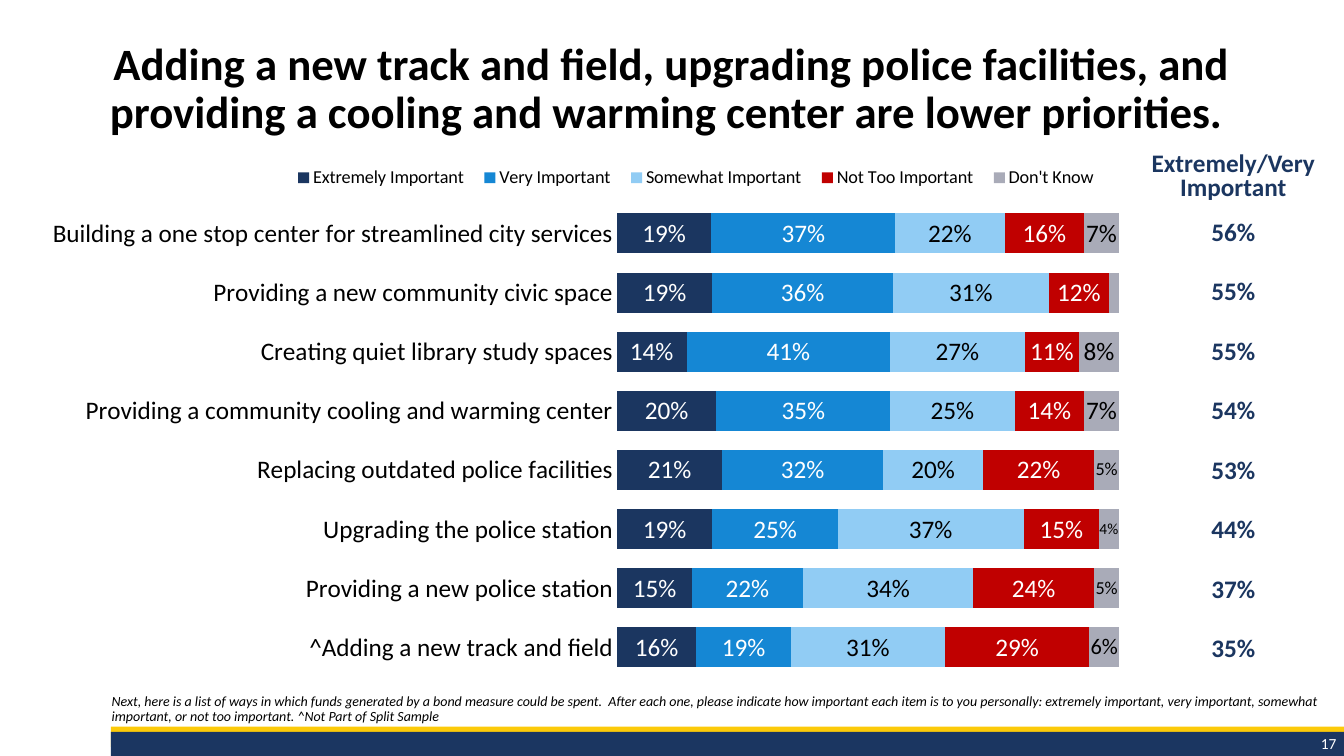
from lxml import etree
from pptx import Presentation
from pptx.chart.data import CategoryChartData
from pptx.dml.color import RGBColor
from pptx.enum.chart import (XL_CHART_TYPE, XL_LABEL_POSITION,
                             XL_LEGEND_POSITION, XL_TICK_MARK)
from pptx.enum.shapes import MSO_SHAPE
from pptx.enum.text import MSO_ANCHOR, PP_ALIGN
from pptx.oxml.ns import qn
from pptx.util import Pt

STACKED = XL_CHART_TYPE.BAR_STACKED_100
MID_LABEL = XL_LABEL_POSITION.CENTER
TOP = XL_LEGEND_POSITION.TOP
NO_TICK = XL_TICK_MARK.NONE
RECT = MSO_SHAPE.RECTANGLE
MIDDLE, BOTTOM = MSO_ANCHOR.MIDDLE, MSO_ANCHOR.BOTTOM
LEFT, CENTER, RIGHT = PP_ALIGN.LEFT, PP_ALIGN.CENTER, PP_ALIGN.RIGHT

FONT = "Calibri"
BLACK = RGBColor(0x00, 0x00, 0x00)
WHITE = RGBColor(0xFF, 0xFF, 0xFF)
NAVY = RGBColor(0x1B, 0x36, 0x60)
BLUE = RGBColor(0x15, 0x87, 0xD4)
SKY = RGBColor(0x91, 0xCC, 0xF4)
RED = RGBColor(0xC0, 0x00, 0x00)
GRAY = RGBColor(0xA9, 0xAB, 0xB8)
GOLD = RGBColor(0xFC, 0xCA, 0x09)
BASE = RGBColor(0x1B, 0x36, 0x61)

TITLE = ("Adding a new track and field, upgrading police facilities, and "
         "providing a cooling and warming center are lower priorities. ")
NOTE = ("Next, here is a list of ways in which funds generated by a bond measure "
        "could be spent.  After each one, please indicate how important each item "
        "is to you personally: extremely important, very important, somewhat "
        "important, or not too important. ^Not Part of Split Sample")
PAGE = "17"
HEAD = "Extremely/Very Important"
ITEMS = [
    ("Building a one stop center for streamlined city services", "56%"),
    ("Providing a new community civic space", "55%"),
    ("Creating quiet library study spaces", "55%"),
    ("Providing a community cooling and warming center", "54%"),
    ("Replacing outdated police facilities", "53%"),
    ("Upgrading the police station", "44%"),
    ("Providing a new police station", "37%"),
    ("^Adding a new track and field", "35%"),
]
SERIES = [
    ("Extremely Important", NAVY, WHITE, (.19, .19, .14, .20, .21, .19, .15, .16)),
    ("Very Important", BLUE, WHITE, (.37, .36, .41, .35, .32, .25, .22, .19)),
    ("Somewhat Important", SKY, BLACK, (.22, .31, .27, .25, .20, .37, .34, .31)),
    ("Not Too Important", RED, WHITE, (.16, .12, .11, .14, .22, .15, .24, .29)),
    ("Don't Know", GRAY, BLACK, (.07, .02, .08, .07, .05, .04, .05, .06)),
]
SMALL = {4: 13, 5: 11, 6: 13, 7: 16}
HIDDEN = 1
BANDS = [(519.1, 14.4, GOLD), (522.7, 17.3, BASE)]
BAND_X = 79.2
WIDE, HIGH = 960, 540


def style(font, size, color, bold=False, italic=False):
    font.name, font.size = FONT, Pt(size)
    font.color.rgb = color
    font.bold, font.italic = bold, italic


def write(frame, text, size, color, align, anchor, space=None, **look):
    frame.word_wrap = True
    frame.vertical_anchor = anchor
    para = frame.paragraphs[0]
    para.alignment = align
    para.line_spacing = space
    run = para.add_run()
    run.text = text
    style(run.font, size, color, **look)


def add_text(slide, box, *args, **look):
    shape = slide.shapes.add_textbox(*map(Pt, box))
    write(shape.text_frame, *args, **look)


def place(node, spot, box, inner=False):
    for old in node.findall(qn("c:layout")):
        node.remove(old)
    layout = etree.Element(qn("c:layout"))
    manual = etree.SubElement(layout, qn("c:manualLayout"))
    pairs = [("layoutTarget", "inner")] if inner else []
    pairs += [("xMode", "edge"), ("yMode", "edge"), *zip("xywh", box)]
    for tag, val in pairs:
        etree.SubElement(manual, qn("c:" + tag)).set("val", str(val))
    node.insert(spot, layout)


def add_bands(slide):
    for top, high, color in BANDS:
        band = slide.shapes.add_shape(
            RECT, Pt(BAND_X), Pt(top), Pt(WIDE - BAND_X), Pt(high))
        band.shadow.inherit = False
        band.fill.solid()
        band.fill.fore_color.rgb = color
        band.line.fill.background()


def add_bars(slide):
    data = CategoryChartData(number_format="0%")
    data.categories = [name for name, _ in ITEMS]
    for name, _, _, vals in SERIES:
        data.add_series(name, vals)
    box = map(Pt, (8.64, 112.3, 853.9, 396.7))
    chart = slide.shapes.add_chart(STACKED, *box, data).chart
    style(chart.font, 18, BLACK)
    chart.has_title = False

    chart.has_legend = True
    legend = chart.legend
    legend.position = TOP
    legend.include_in_layout = False
    style(legend.font, 13, BLACK)
    place(legend._element, 1, (0.227, 0.012, 0.69, 0.05))

    axis = chart.category_axis
    axis.reverse_order = True
    axis.major_tick_mark = axis.minor_tick_mark = NO_TICK
    axis.format.line.fill.background()
    style(axis.tick_labels.font, 18, BLACK)
    scale = chart.value_axis
    scale.minimum_scale, scale.maximum_scale = 0, 1
    scale.major_unit = 0.2
    scale.has_major_gridlines = False
    scale.visible = False

    plot = chart.plots[0]
    plot.gap_width, plot.overlap = 48, 100
    plot.vary_by_categories = False
    area = chart._chartSpace.find(".//" + qn("c:plotArea"))
    place(area, 0, (0.506, 0.084, 0.42, 0.852), inner=True)
    for series, (_, fill, ink, _) in zip(plot.series, SERIES):
        series.format.fill.solid()
        series.format.fill.fore_color.rgb = fill
        labels = series.data_labels
        labels.show_value = True
        labels.number_format = "0%"
        labels.number_format_is_linked = False
        labels.position = MID_LABEL
        style(labels.font, 18, ink)
    trim(series)


def trim(series):
    for spot, size in SMALL.items():
        label = series.points[spot].data_label
        style(label.font, size, BLACK)
        label.position = MID_LABEL
    tag = etree.Element(qn("c:dLbl"))
    etree.SubElement(tag, qn("c:idx")).set("val", str(HIDDEN))
    etree.SubElement(tag, qn("c:delete")).set("val", "1")
    series.data_labels._element.insert(0, tag)


def add_totals(slide):
    texts = [HEAD] + [total for _, total in ITEMS]
    highs = [37.4, 31.7] + [42.5] * (len(ITEMS) - 1)
    box = map(Pt, (819.4, 108, 123.1, sum(highs)))
    table = slide.shapes.add_table(len(texts), 1, *box).table
    table.first_row = table.horz_banding = False
    for row, (text, high) in enumerate(zip(texts, highs)):
        table.rows[row].height = Pt(high)
        cell = table.cell(row, 0)
        cell.fill.background()
        cell.margin_left = cell.margin_right = cell.margin_top = Pt(0.7)
        cell.margin_bottom = Pt(0)
        cell.vertical_anchor = BOTTOM
        write(cell.text_frame, text, 18, NAVY, CENTER, BOTTOM,
              None if row else Pt(17), bold=True)


def main():
    deck = Presentation()
    deck.slide_width, deck.slide_height = Pt(WIDE), Pt(HIGH)
    slide = deck.slides.add_slide(deck.slide_layouts[5])
    add_bands(slide)
    add_text(slide, (820, 520.6, 141.8, 20.9), PAGE, 11, WHITE, RIGHT, MIDDLE)
    add_bars(slide)
    add_totals(slide)
    add_text(slide, (72.7, 482.4, 887, 38.9), NOTE, 10, BLACK, LEFT, BOTTOM,
             0.9, italic=True)
    title = slide.shapes.title
    title.left, title.top, title.width, title.height = map(
        Pt, (23.8, 24.5, 912.2, 79.9))
    write(title.text_frame, TITLE, 32, BLACK, CENTER, MIDDLE, 0.9, bold=True)
    deck.save("out.pptx")


if __name__ == "__main__":
    main()
